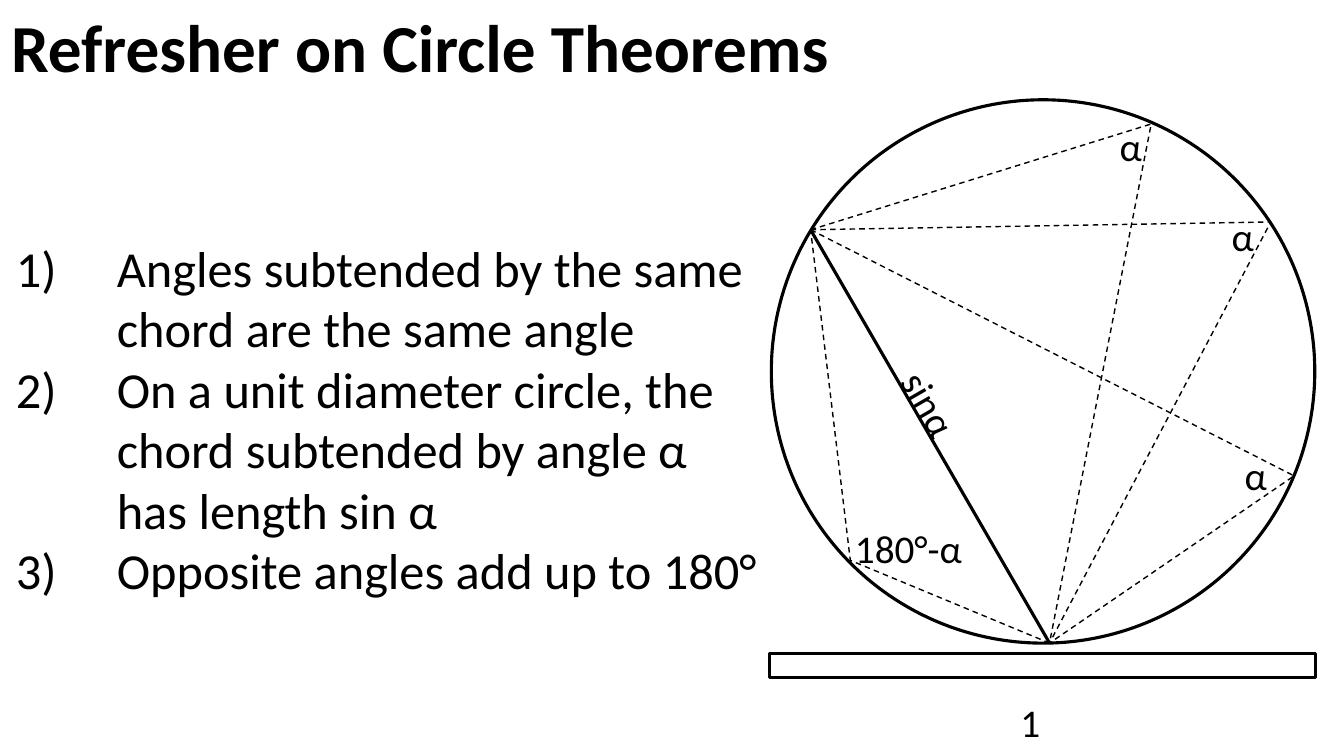
from dataclasses import dataclass
from math import atan2, cos, degrees, hypot, sin

from lxml import etree
from pptx import Presentation
from pptx.dml.color import RGBColor
from pptx.enum.dml import MSO_LINE
from pptx.enum.shapes import MSO_CONNECTOR, MSO_SHAPE as Shape
from pptx.enum.text import MSO_ANCHOR as Anchor, MSO_AUTO_SIZE, PP_ALIGN as Align
from pptx.oxml.ns import qn
from pptx.util import Inches, Pt


@dataclass(frozen=True)
class Theme:
    ink: RGBColor = RGBColor(0, 0, 0)
    paper: RGBColor = RGBColor(255, 255, 255)
    font: str = "Calibri"
    title: int = 48
    body: int = 36
    label: int = 28
    thin: float = 1
    thick: float = 2.25


def apply(target, values):
    for name, value in values.items():
        setattr(target, name, value)


class CirclePage:
    def __init__(self, deck, theme):
        self.theme = theme
        self.page = deck.slides.add_slide(deck.slide_layouts[5])
        fill = self.page.background.fill
        fill.solid()
        fill.fore_color.rgb = theme.paper

    def fill_text(self, box, lines, size, align=Align.LEFT, bold=False, wrap=True):
        frame = box.text_frame
        apply(frame, {"text": "\n".join(lines), "word_wrap": wrap,
                      "auto_size": MSO_AUTO_SIZE.NONE, "vertical_anchor": Anchor.TOP})
        for para in frame.paragraphs:
            para.alignment = align
            font = para.runs[0].font
            apply(font, {"name": self.theme.font, "size": Pt(size), "bold": bold})
            font.color.rgb = self.theme.ink
        return frame.paragraphs

    def title(self, text, left, top, width, height):
        box = self.page.shapes.title
        apply(box, {"left": Inches(left), "top": Inches(top),
                    "width": Inches(width), "height": Inches(height)})
        self.fill_text(box, [text], self.theme.title, bold=True, wrap=False)

    def text_box(self, *area):
        return self.page.shapes.add_textbox(*map(Inches, area))

    def numbered_list(self, lines, *area):
        for para in self.fill_text(self.text_box(*area), lines, self.theme.body):
            props = para._p.get_or_add_pPr()
            props.set("marL", str(Inches(1)))
            props.set("indent", str(-Inches(1)))
            etree.SubElement(props, qn("a:buFont"), typeface="+mj-lt")
            etree.SubElement(props, qn("a:buAutoNum"), type="arabicParenR")

    def label(self, text, left, top, width, rotation=0):
        box = self.text_box(left, top, width, 0.57)
        box.rotation = rotation
        self.fill_text(box, [text], self.theme.label, Align.CENTER)

    def stroke(self, line, weight, dash=None):
        line.color.rgb = self.theme.ink
        apply(line, {"width": Pt(weight), "dash_style": dash})

    def outline(self, kind, area, weight, dash=None, rotation=0):
        shape = self.page.shapes.add_shape(kind, *map(Inches, area))
        shape.shadow.inherit = False
        shape.rotation = rotation
        shape.fill.background()
        self.stroke(shape.line, weight, dash)
        return shape

    def chord(self, start, end):
        line = self.page.shapes.add_connector(MSO_CONNECTOR.STRAIGHT,
                                              *map(Inches, start + end))
        self.stroke(line.line, self.theme.thick)
        etree.SubElement(line._element.spPr, qn("a:effectLst"))

    def triangle_on_chord(self, start, end, rise, apex):
        """Dashed triangle based on the chord; a negative rise puts it on the other side."""
        run, drop = end[0] - start[0], end[1] - start[1]
        base, angle = hypot(run, drop), atan2(drop, run)
        x = (start[0] + end[0]) / 2 + rise / 2 * sin(angle)
        y = (start[1] + end[1]) / 2 - rise / 2 * cos(angle)
        height = abs(rise)
        turn = degrees(angle) + (180 if rise < 0 else 0)
        shape = self.outline(Shape.ISOSCELES_TRIANGLE,
                             (x - base / 2, y - height / 2, base, height),
                             self.theme.thin, MSO_LINE.DASH, turn)
        shape.adjustments[0] = apex


def main():
    deck = Presentation()
    apply(deck, {"slide_width": Inches(13.33), "slide_height": Inches(7.5)})
    theme = Theme()
    page = CirclePage(deck, theme)

    page.title("Refresher on Circle Theorems", 0.01, 0, 8.39, 0.91)
    page.numbered_list([
        "Angles subtended by the same chord are the same angle",
        "On a unit diameter circle, the chord subtended by angle α has length sin α",
        "Opposite angles add up to 180°",
    ], 0.06, 2.3, 7.58, 4.34)

    chord = (8.04, 2.28), (10.41, 6.38)
    page.outline(Shape.OVAL, (7.65, 0.99, 5.39, 5.39), theme.thick)
    for rise, apex in ((3.45, 0.165), (3.99, 0.468), (2.93, 0.953), (-1.3, 0.359)):
        page.triangle_on_chord(*chord, rise, apex)
    page.chord(*chord)
    page.outline(Shape.RECTANGLE, (7.63, 6.48, 5.42, 0.24), theme.thick)

    for left, top in ((10.85, 1.16), (11.96, 2.06), (12.09, 4.43)):
        page.label("α", left, top, 0.73)
    page.label("180°-α", 7.87, 5.15, 2.28)
    page.label("sinα", 8.7, 3.72, 1.04, rotation=60)
    page.label("1", 9.7, 6.88, 1.04)

    deck.save("out.pptx")


if __name__ == "__main__":
    main()
